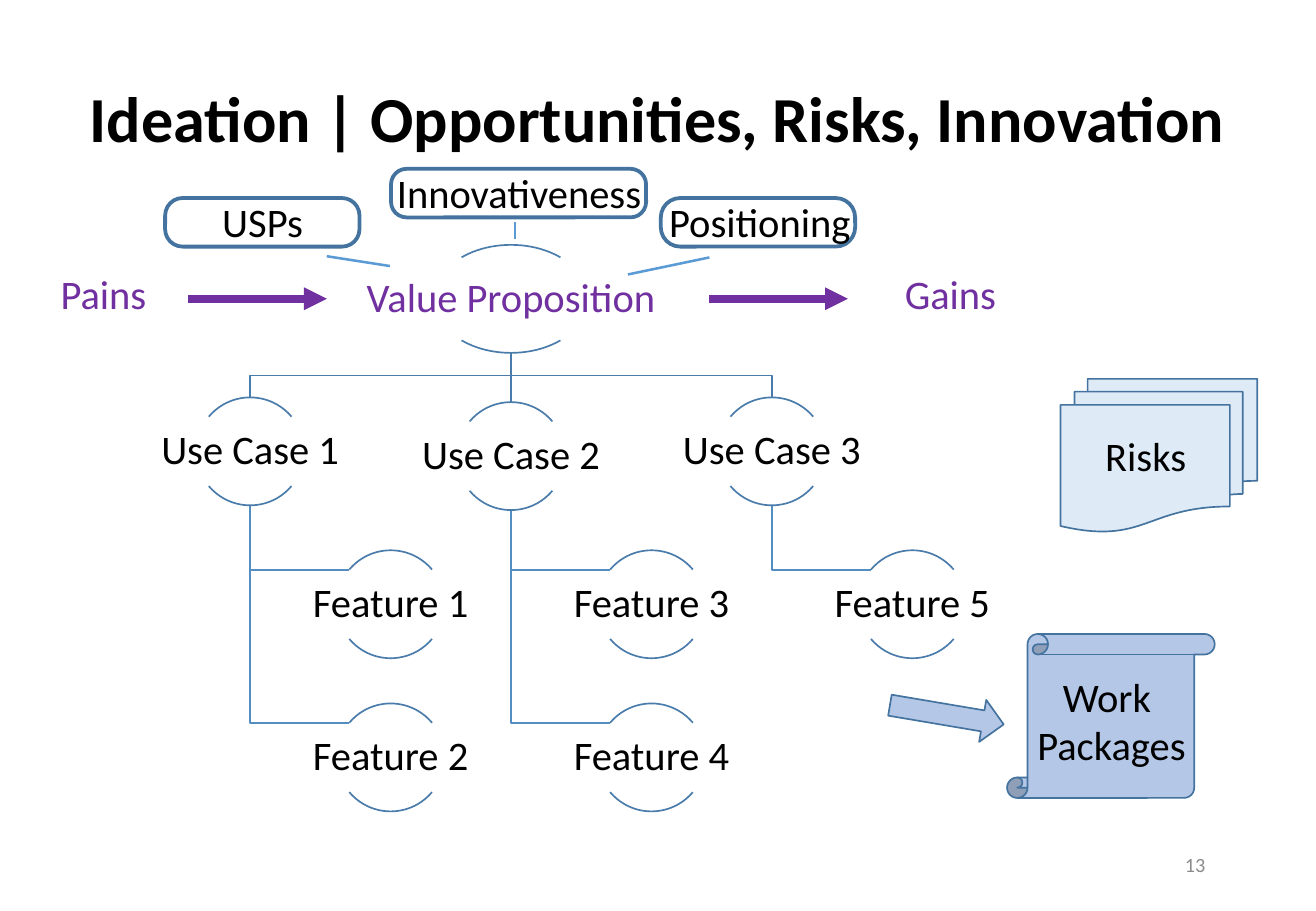
"""Build the ideation slide: value proposition, use cases, features, risks and work packages."""
from lxml import etree
from pptx import Presentation
from pptx import util as u
from pptx.dml.color import RGBColor
from pptx.enum import shapes, text
from pptx.oxml import ns

COLORS = {
    "black": "000000", "purple": "7030A0", "grey": "8C8C8C",
    "arc": "497CAB", "branch": "538DC1", "outline": "43739E",
    "link": "5B9BD5", "paper": "DEEBF7", "scroll": "B4C7E7",
}
KIND = shapes.MSO_SHAPE
ALIGN = text.PP_ALIGN
ANCHOR = text.MSO_ANCHOR

deck = Presentation()
deck.slide_width, deck.slide_height = u.Pt(780), u.Pt(540)
page = deck.slides.add_slide(deck.slide_layouts[6])


def style(item, line, weight=1, fill=None):
    """Set line and fill, and remove the shadow."""
    item.line.color.rgb = RGBColor.from_string(COLORS[line])
    item.line.width = u.Pt(weight)
    if fill:
        item.fill.solid()
        item.fill.fore_color.rgb = RGBColor.from_string(COLORS[fill])
    elif hasattr(item, "fill"):
        item.fill.background()
    etree.SubElement(item._element.spPr, ns.qn("a:effectLst"))


def write(lines, left, top, width, height=36, color="black", size=24, bold=False,
          align=ALIGN.LEFT, anchor=ANCHOR.TOP, spacing=1.0, inset=None):
    """Add a text box with one run for each line."""
    box = page.shapes.add_textbox(u.Pt(left), u.Pt(top), u.Pt(width), u.Pt(height))
    frame = box.text_frame
    frame.word_wrap = True
    frame.vertical_anchor = anchor
    if inset is not None:
        frame.margin_left = frame.margin_right = u.Pt(inset)
        frame.margin_top = frame.margin_bottom = u.Pt(inset)
    para = frame.paragraphs[0]
    para.alignment = align
    para.line_spacing = spacing
    for index, line in enumerate(lines):
        if index:
            para.add_line_break()
        span = para.add_run()
        span.text = line
        span.font.name = "Calibri"
        span.font.size = u.Pt(size)
        span.font.bold = bold
        span.font.color.rgb = RGBColor.from_string(COLORS[color])


write(["Ideation | Opportunities, Risks, Innovation"], 21.6, 46.8, 736.6, 50.4, size=38,
      bold=True, align=ALIGN.CENTER, anchor=ANCHOR.MIDDLE, spacing=0.9)
write(["13"], 545.8, 498.2, 175.7, 28.8, color="grey", size=12,
      align=ALIGN.RIGHT, anchor=ANCHOR.MIDDLE)

NODE = 64
CENTER = 302.9
COLUMN_PITCH = 154.6
VALUE_TOP = 145.2
BRANCH_Y = 222.6
FEATURE_TOP, FEATURE_PITCH = 326.2, 90.8
use_cases = [
    ("Use Case 1", 235.6, ["Feature 1", "Feature 2"]),
    ("Use Case 2", 238.4, ["Feature 3", "Feature 4"]),
    ("Use Case 3", 235.6, ["Feature 5"]),
]

nodes = [("Value Proposition", CENTER, VALUE_TOP, 91.5, 182, "purple")]
elbows = []
links = [
    (111.6, 177.1, 193.7, 177.1, "purple", 4.5, True),
    (420.5, 177.1, 502.6, 177.1, "purple", 4.5, True),
    (193.7, 151.9, 231.1, 157.7, "link", 1.5, False),
    (305.3, 131.8, 305.3, 141.8, "link", 1.5, False),
    (420.5, 152.6, 372.2, 162.7, "link", 1.5, False),
]
for column, (case, top, features) in enumerate(use_cases):
    x = CENTER + (column - 1) * COLUMN_PITCH
    nodes.append((case, x, top, NODE, 127.4, "black"))
    trunk = VALUE_TOP + NODE
    if x == CENTER:
        links.append((x, trunk, x, top, "arc", 1, False))
    else:
        elbows.append(("arc", [(CENTER, trunk), (CENTER, BRANCH_Y), (x, BRANCH_Y), (x, top)]))
    for row, feature in enumerate(features):
        feature_top = FEATURE_TOP + row * FEATURE_PITCH
        joint = feature_top + 11.6
        nodes.append((feature, x + 83.3, feature_top, NODE, 127.4, "black"))
        elbows.append(("branch", [(x, top + NODE), (x, joint), (x + 58.8, joint)]))

for color, points in elbows:
    corners = [(u.Pt(x), u.Pt(y)) for x, y in points]
    builder = page.shapes.build_freeform(*corners[0])
    builder.add_line_segments(corners[1:], close=False)
    style(builder.convert_to_shape(), color)

for x1, y1, x2, y2, color, weight, arrow in links:
    link = page.shapes.add_connector(
        shapes.MSO_CONNECTOR.STRAIGHT, u.Pt(x1), u.Pt(y1), u.Pt(x2), u.Pt(y2))
    style(link, color, weight)
    if arrow:
        etree.SubElement(link.line._get_or_add_ln(), ns.qn("a:tailEnd"), type="triangle")

for label, x, top, arc_width, label_width, color in nodes:
    for start, end in ((132, 192), (24, 84)):
        arc = page.shapes.add_shape(
            KIND.ARC, u.Pt(x - arc_width / 2), u.Pt(top), u.Pt(arc_width), u.Pt(NODE))
        arc.adjustments[0], arc.adjustments[1] = start, end
        style(arc, "arc")
    write([label], x - label_width / 2, top + 11.5, label_width, 41, color=color,
          align=ALIGN.CENTER, anchor=ANCHOR.MIDDLE, spacing=0.9, inset=1.44)

drawings = [
    (KIND.VERTICAL_SCROLL, 596.9, 375.8, 123.1, 97.2, 0, None, 1, "scroll"),
    (KIND.FLOWCHART_MULTIDOCUMENT, 628.6, 224.6, 116.6, 90.7, 0, None, 1, "paper"),
    (KIND.RIGHT_ARROW, 527, 411.1, 68.4, 25.2, 9.6, None, 1, "scroll"),
    (KIND.ROUNDED_RECTANGLE, 97.9, 117.4, 115.2, 28.8, 0, 0.36, 2.25, None),
    (KIND.ROUNDED_RECTANGLE, 231.8, 100.1, 151.2, 28.8, 0, 0.32, 2.25, None),
    (KIND.ROUNDED_RECTANGLE, 391.7, 117.4, 115.2, 28.8, 0, 0.4, 2.25, None),
]
for kind, left, top, width, height, turn, rounding, weight, fill in drawings:
    drawing = page.shapes.add_shape(kind, u.Pt(left), u.Pt(top), u.Pt(width), u.Pt(height))
    drawing.rotation = turn
    if rounding:
        drawing.adjustments[0] = rounding
    style(drawing, "outline", weight, fill)

for label, left, top, width, color in (
    ("Innovativeness", 228.2, 95.8, 166, "black"),
    ("USPs", 124.6, 113, 101.5, "black"),
    ("Positioning", 389.5, 113, 134.6, "black"),
    ("Pains", 28.8, 156.2, 82.8, "purple"),
    ("Gains", 529.2, 156.2, 80, "purple"),
    ("Risks", 648, 252, 95, "black"),
):
    write([label], left, top, width, color=color)
write(["Work ", "Packages"], 600.5, 394.6, 116.6, 65.5, align=ALIGN.CENTER)

deck.save("out.pptx")
